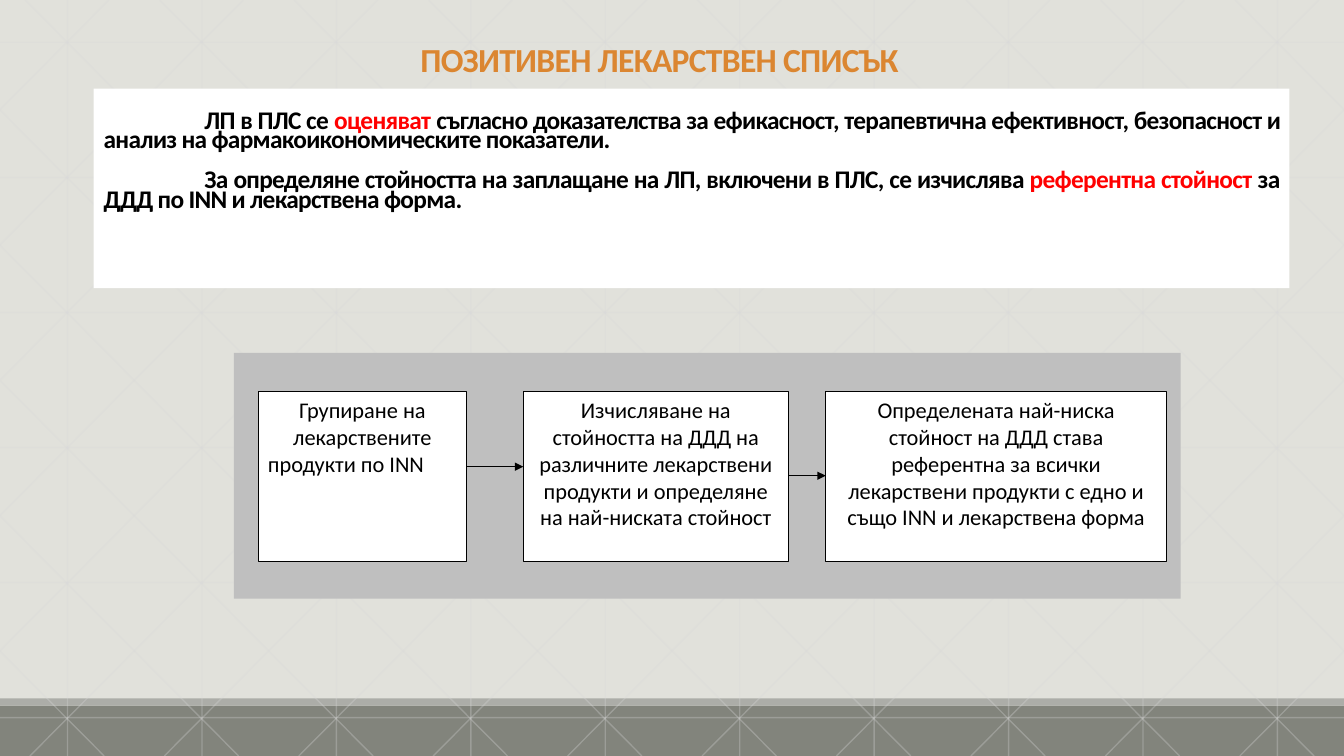
import lxml.etree
import pptx
import pptx.dml.color
import pptx.enum.shapes
import pptx.enum.text
import pptx.oxml.ns
import pptx.util

Inches = pptx.util.Inches
Pt = pptx.util.Pt
color = pptx.dml.color.RGBColor.from_string
qn = pptx.oxml.ns.qn
ANCHOR = pptx.enum.text.MSO_ANCHOR
ALIGN = pptx.enum.text.PP_ALIGN

WIDTH, HEIGHT = 13.33, 7.5
BLACK, RED, WHITE = "000000", "FF0000", "FFFFFF"

presentation = pptx.Presentation()
presentation.slide_width = Inches(WIDTH)
presentation.slide_height = Inches(HEIGHT)
slide = presentation.slides.add_slide(presentation.slide_layouts[6])
slide.background.fill.solid()
slide.background.fill.fore_color.rgb = color("E1E1DB")


def add_line(start, end, line_color, weight):
    points = [Inches(value) for value in (*start, *end)]
    line = slide.shapes.add_connector(pptx.enum.shapes.MSO_CONNECTOR.STRAIGHT, *points)
    line.line.color.rgb = color(line_color)
    line.line.width = Pt(weight)
    lxml.etree.SubElement(line._element.spPr, qn("a:effectLst"))
    return line


def add_box(left, top, width, height, fill=None, outline=None, paragraphs=(),
            size=16, bold=False, spacing=None, align=ALIGN.CENTER, anchor=ANCHOR.TOP):
    box = slide.shapes.add_shape(pptx.enum.shapes.MSO_SHAPE.RECTANGLE,
                                 Inches(left), Inches(top), Inches(width), Inches(height))
    box.shadow.inherit = False
    if fill:
        box.fill.solid()
        box.fill.fore_color.rgb = color(fill)
    else:
        box.fill.background()
    if outline:
        box.line.color.rgb = color(outline)
        box.line.width = Pt(0.75)
    else:
        box.line.fill.background()
    frame = box.text_frame
    frame.word_wrap = True
    frame.vertical_anchor = anchor
    for index, runs in enumerate(paragraphs):
        paragraph = frame.add_paragraph() if index else frame.paragraphs[0]
        paragraph.alignment = align
        paragraph.line_spacing = spacing
        for text, text_color in runs:
            run = paragraph.add_run()
            run.text = text
            run.font.name = "Calibri"
            run.font.size = Pt(size)
            run.font.bold = bold
            run.font.color.rgb = color(text_color)
            if bold:
                run._r.get_or_add_rPr().set("spc", "-50")
    return box


add_box(0, 7, WIDTH, 0.5, "82847C")
add_box(0, 6.93, WIDTH, 0.07, "ACADA8")

step = 4 / 3
grid = [((0.67 + step * i, 0), (0.67 + step * i, HEIGHT)) for i in range(10)]
grid += [((0, 0.42 + 1.34 * i), (WIDTH, 0.42 + 1.34 * i)) for i in range(6)]
run_across = 7.45
slope = HEIGHT / run_across
for i in range(-5, 10):
    origin = 0.25 + step * i
    left, right = max(origin, 0), min(origin + run_across, WIDTH)
    top, bottom = (left - origin) * slope, (right - origin) * slope
    grid.append(((left, top), (right, bottom)))
    grid.append(((WIDTH - left, top), (WIDTH - right, bottom)))
for start, end in grid:
    grid_line = add_line(start, end, "D9D9D9", 1)
    grid_color = grid_line.line._ln.find(".//" + qn("a:srgbClr"))
    lxml.etree.SubElement(grid_color, qn("a:alpha"), val="30000")

add_box(1.04, 0.25, 11, 0.59, paragraphs=[[("ПОЗИТИВЕН ЛЕКАРСТВЕН СПИСЪК", "DB8631")]],
        size=24, bold=True, spacing=0.85, anchor=ANCHOR.BOTTOM)

rules = [
    [("ЛП в ПЛС се ", BLACK), ("оценяват", RED),
     (" съгласно доказателства за ефикасност, терапевтична ефективност, безопасност и "
      "анализ на фармакоикономическите показатели.", BLACK)],
    [("За определяне стойността на заплащане на ЛП, включени в ПЛС, се изчислява ", BLACK),
     ("референтна стойност", RED), (" за ДДД по INN и лекарствена форма.", BLACK)],
]
rules_box = add_box(0.93, 0.88, 11.86, 1.98, WHITE, paragraphs=rules, size=18.1, bold=True,
                    spacing=0.65, align=ALIGN.JUSTIFY, anchor=ANCHOR.BOTTOM)
rules_box.text_frame.margin_bottom = Inches(0.75)
for paragraph in rules_box.text_frame.paragraphs:
    paragraph._p.get_or_add_pPr().set("indent", str(Inches(1)))
rules_box.text_frame.paragraphs[0].space_after = Pt(14.4)

add_box(2.32, 3.5, 9.39, 2.44, "BFBFBF")
steps = [
    (2.56, 2.07, "Групиране на лекарствените продукти по INN\t"),
    (5.19, 2.63, "Изчисляване на стойността на ДДД на различните лекарствени продукти "
                 "и определяне на най-ниската стойност"),
    (8.19, 3.38, "Определената най-ниска стойност на ДДД става референтна за всички "
                 "лекарствени продукти с едно и също INN и лекарствена форма"),
]
for left, width, text in steps:
    add_box(left, 3.88, width, 1.69, WHITE, BLACK, [[(text, BLACK)]])

for (left, width, _), (next_left, _, _), y in zip(steps, steps[1:], (4.63, 4.72)):
    arrow = add_line((left + width, y), (next_left, y), BLACK, 0.75)
    lxml.etree.SubElement(arrow.line._ln, qn("a:tailEnd"), type="triangle")

presentation.save("out.pptx")
